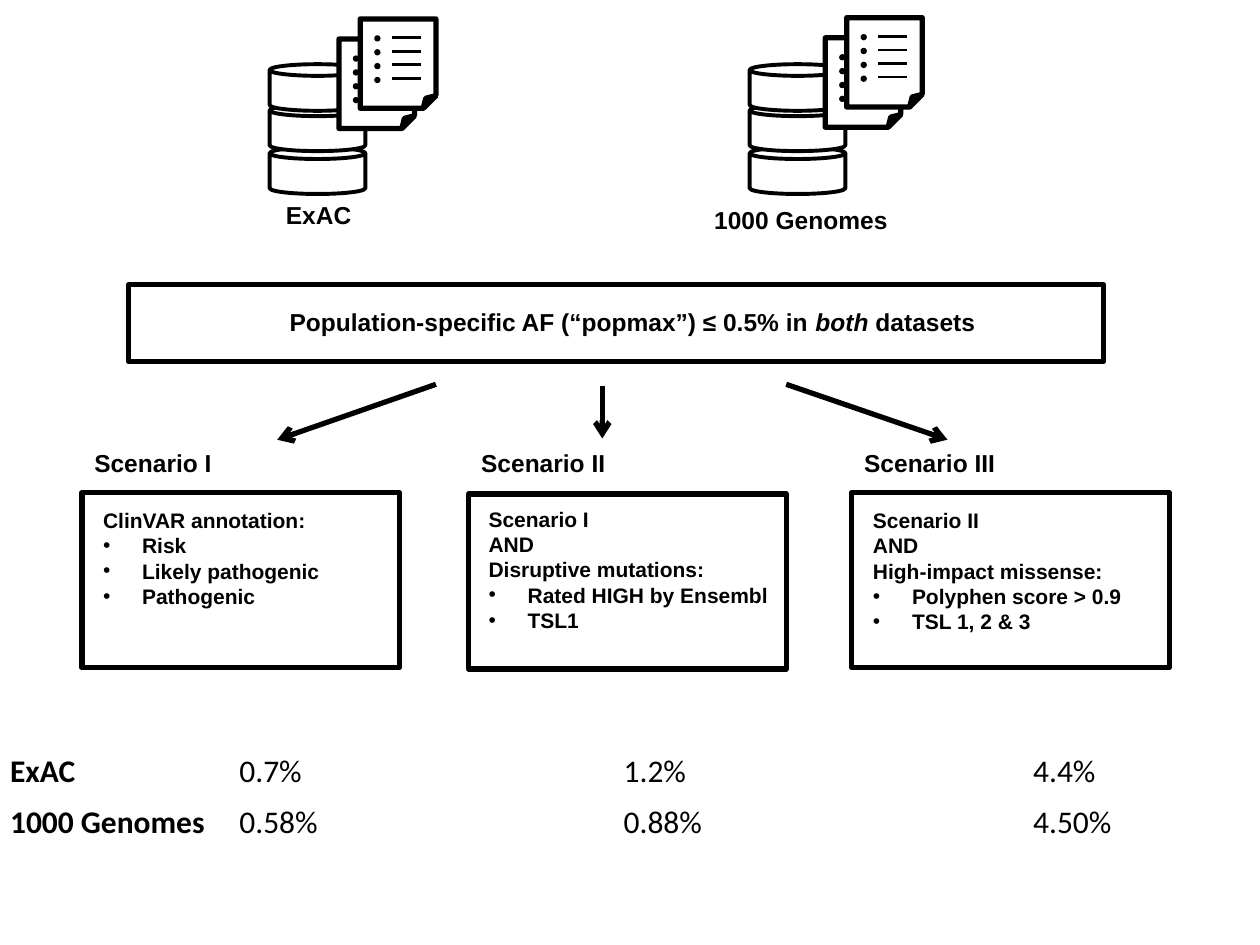
import pptx
import pptx.util
import pptx.dml.color
import pptx.enum.shapes
import pptx.enum.text
import pptx.oxml.ns
import lxml.etree

Inches = pptx.util.Inches
Pt = pptx.util.Pt
Shape = pptx.enum.shapes.MSO_SHAPE
qn = pptx.oxml.ns.qn


def color(value):
    return pptx.dml.color.RGBColor.from_string(value)


class FilterPage:
    ink = "000000"
    paper = "FFFFFF"
    heading_size = 14
    body_size = 12
    table_size = 18

    def __init__(self, page):
        self.page = page

    def style_font(self, font, size, name="Arial", bold=True):
        font.size = Pt(size)
        font.name = name
        font.bold = bold
        font.color.rgb = color(self.ink)

    def shape(self, kind, left, top, width, height, line_width):
        shape = self.page.shapes.add_shape(
            kind, Inches(left), Inches(top), Inches(width), Inches(height))
        shape.shadow.inherit = False
        shape.fill.solid()
        shape.fill.fore_color.rgb = color(self.paper)
        shape.line.color.rgb = color(self.ink)
        shape.line.width = Pt(line_width)
        return shape

    def dot(self, left, top):
        dot = self.shape(Shape.OVAL, left, top, 0.05, 0.05, 1)
        dot.fill.fore_color.rgb = color(self.ink)
        dot.line.fill.background()

    def line(self, start, end, width, arrow=False):
        line = self.page.shapes.add_connector(
            pptx.enum.shapes.MSO_CONNECTOR.STRAIGHT,
            *(Inches(value) for value in (*start, *end)))
        line.line.color.rgb = color(self.ink)
        line.line.width = Pt(width)
        if arrow:
            outline = line.line._get_or_add_ln()
            lxml.etree.SubElement(outline, qn("a:tailEnd"), type="arrow")
        lxml.etree.SubElement(line._element.spPr, qn("a:effectLst"))

    def text(self, left, top, width, height, lines, size, bullets=()):
        box = self.page.shapes.add_textbox(
            Inches(left), Inches(top), Inches(width), Inches(height))
        frame = box.text_frame
        frame.word_wrap = False
        frame.auto_size = pptx.enum.text.MSO_AUTO_SIZE.SHAPE_TO_FIT_TEXT
        frame.text = "\n".join([*lines, *bullets])
        for index, para in enumerate(frame.paragraphs):
            if index >= len(lines):
                self.bullet(para)
            for span in para.runs:
                self.style_font(span.font, size)
        return frame

    def bullet(self, para):
        properties = para._p.get_or_add_pPr()
        properties.set("marL", str(Inches(0.31)))
        properties.set("indent", str(-Inches(0.31)))
        lxml.etree.SubElement(properties, qn("a:buFont"), typeface="Arial")
        lxml.etree.SubElement(properties, qn("a:buChar"), char="•")

    def heading(self, left, top, width, words):
        return self.text(left, top, width, 0.34, [words], self.heading_size)

    def database(self, left):
        for top in (1.17, 0.83, 0.51):
            self.shape(Shape.CAN, left, top, 0.76, 0.37, 2.25)

    def document(self, left, top):
        self.shape(Shape.FOLDED_CORNER, left, top, 0.6, 0.71, 3)
        for row in range(4):
            line_top = top + 0.15 + 0.107 * row
            self.line((left + 0.48, line_top), (left + 0.25, line_top), 1.5)
            self.dot(left + 0.11, top + 0.13 + 0.11 * row)

    def scenario(self, left, top, title, title_width, text_at, text_size, lines, bullets):
        self.shape(Shape.RECTANGLE, left, top, 2.52, 1.39, 3)
        self.text(*text_at, *text_size, lines, self.body_size, bullets)
        self.heading(left, 3.51, title_width, title)

    def table(self, left, top, widths, row_height, rows):
        table = self.page.shapes.add_table(
            len(rows), len(widths), Inches(left), Inches(top),
            Inches(sum(widths)), Inches(row_height * len(rows))).table
        table.first_row = False
        table.horz_banding = False
        for column, width in zip(table.columns, widths):
            column.width = Inches(width)
        for row, values in zip(table.rows, rows):
            row.height = Inches(row_height)
            for index, (cell, value) in enumerate(zip(row.cells, values)):
                cell.fill.solid()
                cell.fill.fore_color.rgb = color(self.paper)
                cell.text_frame.text = value
                span = cell.text_frame.paragraphs[0].runs[0]
                self.style_font(span.font, self.table_size, "Calibri", index == 0)


def main():
    deck = pptx.Presentation()
    deck.slide_width = Inches(10)
    deck.slide_height = Inches(7.5)
    page = FilterPage(deck.slides.add_slide(deck.slide_layouts[6]))

    page.database(2.14)
    page.heading(2.17, 1.54, 0.75, "ExAC")
    page.database(5.95)
    page.heading(5.57, 1.58, 1.59, "1000 Genomes")

    page.shape(Shape.RECTANGLE, 1.02, 2.26, 7.74, 0.61, 3)
    criterion = page.heading(2.2, 2.39, 5.69, "Population-specific AF (“popmax”) ≤ 0.5% in ")
    para = criterion.paragraphs[0]
    for words, italic in (("both", True), (" datasets", False)):
        span = para.add_run()
        span.text = words
        page.style_font(span.font, page.heading_size)
        span.font.italic = italic

    page.scenario(0.65, 3.91, "Scenario I", 1.14, (0.72, 3.98), (1.93, 0.91),
                  ["ClinVAR annotation:"],
                  ["Risk", "Likely pathogenic", "Pathogenic"])
    page.scenario(3.72, 3.92, "Scenario II", 1.19, (3.78, 3.97), (2.43, 1.11),
                  ["Scenario I", "AND", "Disruptive mutations:"],
                  ["Rated HIGH by Ensembl", "TSL1"])
    page.scenario(6.76, 3.91, "Scenario III", 1.25, (6.83, 3.98), (2.19, 1.11),
                  ["Scenario II", "AND", "High-impact missense:"],
                  ["Polyphen score > 0.9", "TSL 1, 2 & 3"])

    for left, top in ((2.69, 0.31), (6.55, 0.3)):
        page.document(left, top)
        page.document(left + 0.17, top - 0.16)

    for start, end in (((3.46, 3.05), (2.2, 3.49)),
                       ((6.24, 3.05), (7.52, 3.49)),
                       ((4.78, 3.06), (4.78, 3.48))):
        page.line(start, end, 3, arrow=True)

    page.table(-0.02, 5.92, (1.82, 3.05, 3.25, 0.98), 0.41,
               [("ExAC", "0.7%", "1.2%", "4.4%"),
                ("1000 Genomes", "0.58%", "0.88%", "4.50%")])

    deck.save("out.pptx")


if __name__ == "__main__":
    main()
